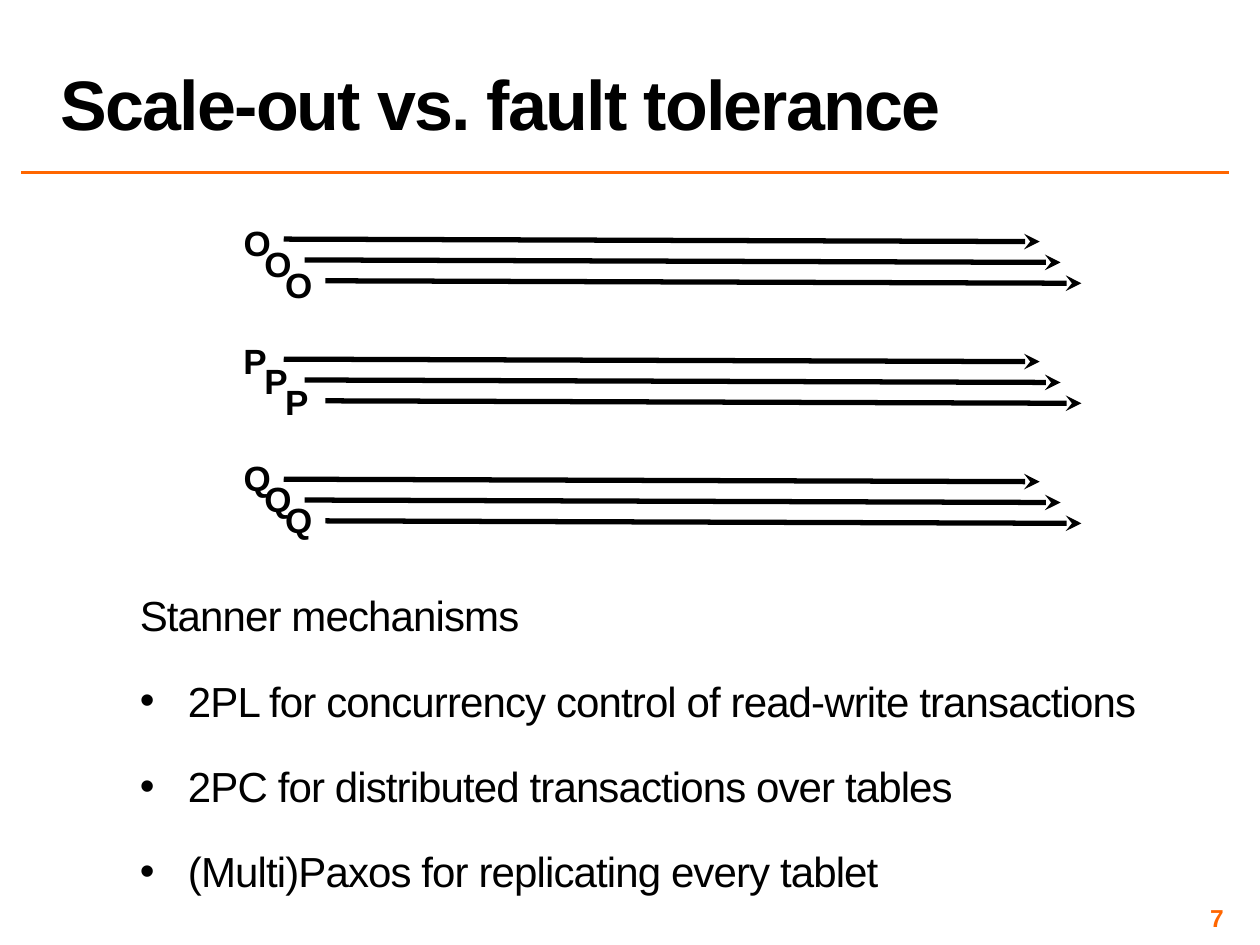
from lxml.etree import SubElement
from pptx import Presentation
from pptx.dml.color import RGBColor
from pptx.enum.shapes import MSO_CONNECTOR
from pptx.enum.text import MSO_ANCHOR, PP_ALIGN
from pptx.oxml.ns import qn
from pptx.util import Cm, Pt


def color(code):
    return RGBColor.from_string(code)


def apply(target, values):
    for name, value in values.items():
        setattr(target, name, value)


class Deck:
    font = "Arial"
    ink = "000000"
    accent = "FF6600"

    def __init__(self):
        self.file = Presentation()
        apply(self.file, {"slide_width": Cm(25.4), "slide_height": Cm(19.05)})
        self.slide = self.file.slides.add_slide(self.file.slide_layouts[6])

    def line(self, start, end, width, code, arrow=False):
        points = [Cm(v) for v in (*start, *end)]
        line = self.slide.shapes.add_connector(MSO_CONNECTOR.STRAIGHT, *points)
        line.line.width = Pt(width)
        line.line.color.rgb = color(code)
        if arrow:
            SubElement(line.line._get_or_add_ln(), qn("a:tailEnd"), type="stealth")
        SubElement(line._element.spPr, qn("a:effectLst"))

    def text(self, box, words, size, code=ink, bold=False, track=0,
             inset=None, frame=None, para=None):
        shape = self.slide.shapes.add_textbox(*[Cm(v) for v in box])
        body = shape.text_frame
        apply(body, {"word_wrap": True, **(frame or {})})
        if inset is not None:
            sides = ("left", "top", "right", "bottom")
            apply(body, {f"margin_{side}": Cm(inset) for side in sides})
        body.text = "\n".join(words)
        for item in body.paragraphs:
            apply(item, para or {})
            run = item.runs[0]
            apply(run.font, {"name": self.font, "size": Pt(size), "bold": bold})
            run.font.color.rgb = color(code)
            if track:
                run.font._element.set("spc", str(int(track * 100)))
        return body.paragraphs

    def bullet(self, item, indent):
        props = item._p.get_or_add_pPr()
        props.set("marL", str(Cm(indent)))
        props.set("indent", str(-Cm(indent)))
        SubElement(props, qn("a:buFont"), typeface=self.font)
        SubElement(props, qn("a:buChar"), char="•")

    def stack(self, letter, row):
        for step in range(3):
            shift = 0.42 * step
            left = 5.72 + shift
            top = 4.82 + 2.42 * row + shift
            self.line((left, top), (left + 15.24, top + 0.05), 3, self.ink, True)
            width = 0.99 if letter == "P" else 1.07
            box = (4.65 + shift, 4.34 + 2.37 * row + shift, width, 1.11)
            self.text(box, [letter], 20, bold=True, frame={"word_wrap": False},
                      para={"alignment": PP_ALIGN.CENTER})


def main():
    deck = Deck()
    deck.line((0.43, 3.48), (24.77, 3.48), 2, deck.accent)
    deck.text((0.97, 0.05, 23.8, 2.97), ["Scale-out vs. fault tolerance"], 40,
              bold=True, track=-1, frame={"vertical_anchor": MSO_ANCHOR.BOTTOM},
              para={"line_spacing": 0.8})
    for row, letter in enumerate("OPQ"):
        deck.stack(letter, row)
    words = [
        "Stanner mechanisms",
        "2PL for concurrency control of read-write transactions",
        "2PC for distributed transactions over tables",
        "(Multi)Paxos for replicating every tablet",
    ]
    items = deck.text((2.72, 11.79, 21.56, 6.86), words, 24, track=-0.5, inset=0.1,
                      para={"space_before": Pt(12), "space_after": Pt(8)})
    for item in items[1:]:
        deck.bullet(item, 0.97)
    deck.text((18.85, 18.21, 5.92, 0.58), ["7"], 14, deck.accent, True, inset=0.1,
              frame={"vertical_anchor": MSO_ANCHOR.MIDDLE},
              para={"alignment": PP_ALIGN.RIGHT})
    deck.file.save("out.pptx")


if __name__ == "__main__":
    main()
